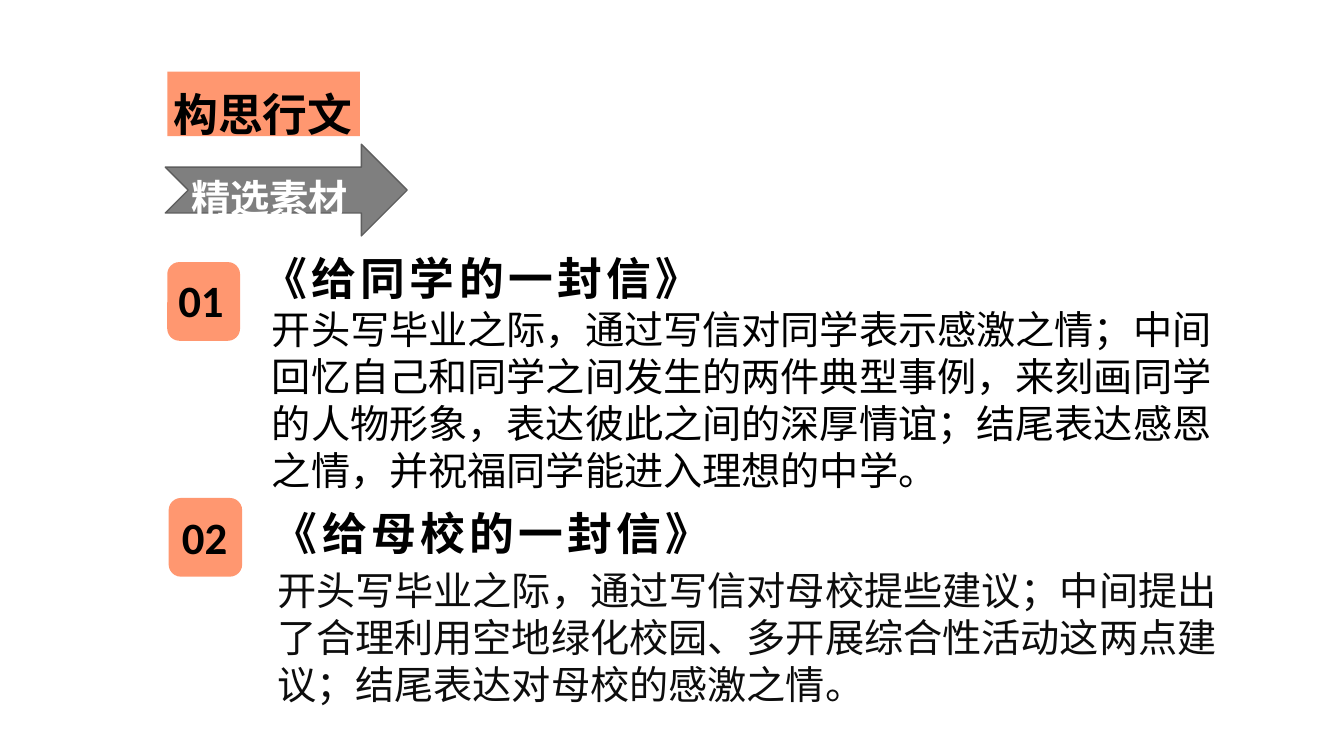
import pptx
import pptx.util
import pptx.dml.color
import pptx.enum.shapes
import pptx.enum.text
import pptx.oxml
import pptx.oxml.ns

Pt = pptx.util.Pt
RGBColor = pptx.dml.color.RGBColor
SHAPE = pptx.enum.shapes.MSO_SHAPE
ALIGN = pptx.enum.text.PP_ALIGN

ORANGE = RGBColor(0xFF, 0x97, 0x70)
GRAY = RGBColor(0x7F, 0x7F, 0x7F)
DARK_GRAY = RGBColor(0x5E, 0x5E, 0x5E)
BLACK = RGBColor(0, 0, 0)
NEAR_BLACK = RGBColor(0x0D, 0x0D, 0x0D)
WHITE = RGBColor(0xFF, 0xFF, 0xFF)
CJK = "Noto Sans CJK SC"
LATIN = "Calibri"

HEADING = dict(size=Pt(32), name=LATIN, bold=True)
BODY = dict(size=Pt(28), name=CJK, bold=False)
TITLE = dict(size=Pt(32), name=CJK, bold=True)
LABEL = dict(size=Pt(28), name=CJK, bold=True)

# Offsets inside an item: left, top, width, height
ITEMS = [
    dict(number="01", heading="《给同学的一封信》",
         body="开头写毕业之际，通过写信对同学表示感激之情；中间回忆自己和同学之间发生的两件典型事例，"
              "来刻画同学的人物形象，表达彼此之间的深厚情谊；结尾表达感恩之情，并祝福同学能进入理想的中学。",
         color=BLACK, at=(119.5, 172), badge=(0, 15.2, 52, 56.2),
         number_box=(0.7, 19.5, 46.8, 46), heading_box=(61.2, 0, 351, 45.4),
         body_box=(67.7, 39.7, 698.4, 141.8)),
    dict(number="02", heading="《给母校的一封信》",
         body="开头写毕业之际，通过写信对母校提些建议；中间提出了合理利用空地绿化校园、"
              "多开展综合性活动这两点建议；结尾表达对母校的感激之情。",
         color=NEAR_BLACK, at=(120.5, 354.2), badge=(0, 1.5, 52.5, 56.2),
         number_box=(1.9, 6.5, 47.5, 46), heading_box=(67.4, 0, 351, 45.4),
         body_box=(70.3, 44, 704.9, 108)),
]


def points(box, origin=(0, 0)):
    left, top, width, height = box
    return [Pt(v) for v in (left + origin[0], top + origin[1], width, height)]


def write(shape, text, font, color, align=ALIGN.LEFT, line=1.2, tracking=0, wrap=True):
    """Fill a box with one paragraph; line is the line pitch in ems, None for natural."""
    frame = shape.text_frame
    size = font["size"].pt
    layout = dict(word_wrap=wrap, margin_left=Pt(7.2), margin_right=Pt(7.2),
                  margin_top=Pt(3.6 + (0.1 * size if line else 0)), margin_bottom=Pt(0),
                  vertical_anchor=pptx.enum.text.MSO_ANCHOR.TOP,
                  auto_size=pptx.enum.text.MSO_AUTO_SIZE.SHAPE_TO_FIT_TEXT)
    for name, value in layout.items():
        setattr(frame, name, value)
    paragraph = frame.paragraphs[0]
    paragraph.alignment = align
    paragraph.space_before = Pt(0)
    if line:
        paragraph.line_spacing = Pt(round(size * line, 1))
    run = paragraph.add_run()
    run.text = text
    for name, value in font.items():
        setattr(run.font, name, value)
    run.font.color.rgb = color
    properties = run._r.get_or_add_rPr()
    if tracking:
        properties.set("spc", str(tracking * 100))
    east_asian = pptx.oxml.parse_xml(
        f'<a:ea {pptx.oxml.ns.nsdecls("a")} typeface="{CJK}"/>')
    properties.find(pptx.oxml.ns.qn("a:latin")).addnext(east_asian)


def add_filled(shapes, kind, box, fill, outline=None):
    shape = shapes.add_shape(kind, *box)
    shape.shadow.inherit = False
    shape.fill.solid()
    shape.fill.fore_color.rgb = fill
    if outline:
        shape.line.color.rgb = outline
        shape.line.width = Pt(1)
    else:
        shape.line.fill.background()
    return shape


def add_title(slide, box):
    left, top, width, height = box
    add_filled(slide.shapes, SHAPE.RECTANGLE, points(box), ORANGE)
    title = slide.shapes.title
    title.left, title.top, title.width, title.height = points(
        (left - 2.9, top - 7.2, width + 20.2, height + 10.8))
    write(title, "构思行文", TITLE, BLACK, ALIGN.JUSTIFY, line=1.56)
    slide.shapes.element.append(title.element)  # bring in front of its panel


def add_arrow_label(slide, box):
    left, top, width, height = box
    add_filled(slide.shapes, SHAPE.NOTCHED_RIGHT_ARROW, points(box), GRAY, DARK_GRAY)
    label = slide.shapes.add_textbox(
        *points((left + 11.5, top + 5, width - 37.4, height - 14.4)))
    write(label, "精选素材", LABEL, WHITE, ALIGN.JUSTIFY, line=1.56)


def add_item(slide, item):
    shapes = slide.shapes.add_group_shape().shapes
    origin = item["at"]
    heading = shapes.add_textbox(*points(item["heading_box"], origin))
    write(heading, item["heading"], HEADING, BLACK, tracking=3)
    add_filled(shapes, SHAPE.ROUNDED_RECTANGLE, points(item["badge"], origin), ORANGE)
    body = shapes.add_textbox(*points(item["body_box"], origin))
    write(body, item["body"], BODY, item["color"])
    number = shapes.add_textbox(*points(item["number_box"], origin))
    write(number, item["number"], HEADING, BLACK, ALIGN.CENTER, line=None, wrap=False)


def main():
    deck = pptx.Presentation()
    deck.slide_width, deck.slide_height = Pt(960), Pt(540)
    slide = deck.slides.add_slide(deck.slide_layouts[5])
    for item in ITEMS:
        add_item(slide, item)
    add_title(slide, (119.5, 51.1, 137.5, 46.1))
    add_arrow_label(slide, (118.1, 103, 172.8, 65.5))
    deck.save("out.pptx")


if __name__ == "__main__":
    main()
